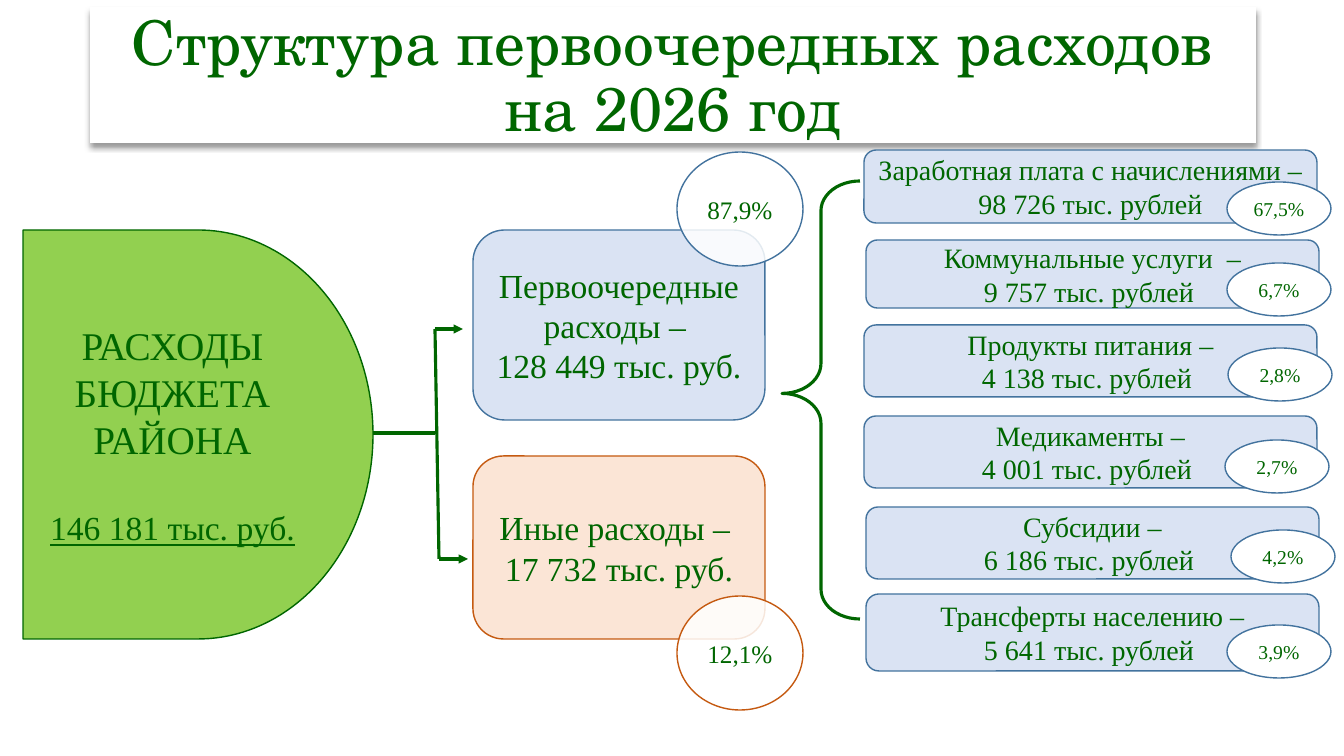
from lxml import etree
from pptx import Presentation
from pptx.dml.color import RGBColor
from pptx.enum.shapes import MSO_CONNECTOR, MSO_SHAPE
from pptx.enum.text import MSO_ANCHOR, MSO_AUTO_SIZE, PP_ALIGN
from pptx.oxml.ns import qn
from pptx.util import Emu, Pt

ROUND, OVAL = MSO_SHAPE.ROUNDED_RECTANGLE, MSO_SHAPE.OVAL
DELAY, BRACE = MSO_SHAPE.FLOWCHART_DELAY, MSO_SHAPE.LEFT_BRACE
LINE = MSO_CONNECTOR.STRAIGHT
CENTER, MIDDLE, TOP = PP_ALIGN.CENTER, MSO_ANCHOR.MIDDLE, MSO_ANCHOR.TOP
FIXED = MSO_AUTO_SIZE.NONE

# Content
TITLE = "Структура первоочередных расходов на 2026 год"
TOTAL = ["РАСХОДЫ БЮДЖЕТА РАЙОНА", "146 181 тыс. руб."]
# lines, fill, edge, top, height, share, top of share
PARTS = [
    (["Первоочередные расходы – ", "128 449 тыс. руб."],
     "pale", "blue", 230, 190, "87,9%", 152),
    (["Иные расходы – ", "17 732 тыс. руб."],
     "peach", "rust", 456, 183, "12,1%", 596),
]
# name, sum, left, top, height, share, left and top of share
ITEMS = [
    ("Заработная плата с начислениями –", "98 726 тыс. рублей",
     864, 150, 73, "67,5%", 1227, 182),
    ("Коммунальные услуги  –", "9 757 тыс. рублей ",
     866, 240, 68, "6,7%", 1227, 263),
    ("Продукты питания –", "4 138 тыс. рублей ",
     864, 325, 72, "2,8%", 1228, 348),
    ("Медикаменты –", "4 001 тыс. рублей ",
     864, 416, 72, "2,7%", 1225, 440),
    ("Субсидии –", "6 186 тыс. рублей ",
     866, 507, 72, "4,2%", 1231, 530),
    ("Трансферты населению –", "5 641 тыс. рублей ",
     866, 594, 77, "3,9%", 1227, 625),
]
# start, end, arrow
LINKS = [
    ((373, 433), (435, 433), False),
    ((435, 329), (439, 559), False),
    ((435, 329), (463, 329), True),
    ((439, 559), (468, 559), True),
]
HEX = {"ink": "006600", "lime": "92D050", "pale": "DAE3F3", "blue": "43739E",
       "peach": "FBE5D6", "rust": "C55A11", "white": "FFFFFF", "black": "000000"}
HEAD, BODY = "TeX Gyre Schola", "Times New Roman"


# Helpers
def px(n):
    return Emu(round(n * 914400 / 100.8))


def color(name):
    return RGBColor.from_string(HEX[name])


def apply(target, values):
    for key, value in values.items():
        setattr(target, key, value)


def add(parent, tag, **attrs):
    return etree.SubElement(parent, qn(tag), attrs)


def write(shape, lines, size, face=BODY, anchor=MIDDLE, inset=10):
    frame = shape.text_frame
    side = px(inset)
    apply(frame, {"word_wrap": True, "auto_size": FIXED, "vertical_anchor": anchor,
                  "margin_left": side, "margin_right": side})
    frame.text = "\n".join(lines)
    for para in frame.paragraphs:
        para.alignment = CENTER
        apply(para.font, {"name": face, "size": Pt(size), "bold": False})
        para.font.color.rgb = color("ink")
    return frame.paragraphs


def draw(kind, box, edge, fill=None, width=1):
    shape = slide.shapes.add_shape(kind, *map(px, box))
    shape.shadow.inherit = False
    shape.line.width = Pt(width)
    shape.line.color.rgb = color(edge)
    if fill:
        shape.fill.solid()
        shape.fill.fore_color.rgb = color(fill)
    else:
        shape.fill.background()
    return shape


deck = Presentation()
deck.slide_width, deck.slide_height = px(1344), px(756)
slide = deck.slides.add_slide(deck.slide_layouts[5])

# Title on a white card with a shadow
title = slide.shapes.title
apply(title, {"left": px(90), "top": px(7), "width": px(1166), "height": px(136)})
title.fill.solid()
title.fill.fore_color.rgb = color("white")
write(title, [TITLE], 44, HEAD, TOP)[0].line_spacing = 0.9
glow = add(add(title._element.spPr, "a:effectLst"), "a:outerShdw", blurRad="50800",
           dist="38100", dir="5400000", algn="t", rotWithShape="0")
add(add(glow, "a:srgbClr", val=HEX["black"]), "a:alpha", val="40000")

# Total budget
total = draw(DELAY, (23, 230, 350, 409), "ink", "lime")
last = write(total, TOTAL, 28)[-1]
last.space_before = Pt(32)
apply(last.font, {"size": Pt(24), "underline": True})

# Two parts of the budget
for lines, fill, edge, top, high, *_ in PARTS:
    write(draw(ROUND, (473, top, 292, high), edge, fill), lines, 24)

# Links from total to parts
for start, end, arrow in LINKS:
    link = slide.shapes.add_connector(LINE, *map(px, start + end))
    link.line.width = Pt(2.25)
    link.line.color.rgb = color("ink")
    if arrow:
        add(link.line._get_or_add_ln(), "a:tailEnd", type="triangle")
    add(link._element.spPr, "a:effectLst")

# Priority items
for name, cost, left, top, high, *_ in ITEMS:
    write(draw(ROUND, (left, top, 453, high), "blue", "pale"), [name, cost], 20)

brace = draw(BRACE, (782, 181, 78, 438), "ink", width=2.25)
brace.adjustments[0], brace.adjustments[1] = 0.382, 0.485

# Shares of the parts, slightly see-through
for _, _, edge, _, _, share, top in PARTS:
    disc = draw(OVAL, (677, top, 126, 114), edge, "white")
    tint = disc._element.spPr.find(qn("a:solidFill"))[0]
    add(tint, "a:alpha", val="85000")
    write(disc, [share], 18)

# Shares of the items
for *_, share, left, top in ITEMS:
    write(draw(OVAL, (left, top, 104, 53), "blue", "white"), [share], 14, inset=0)

deck.save("out.pptx")
